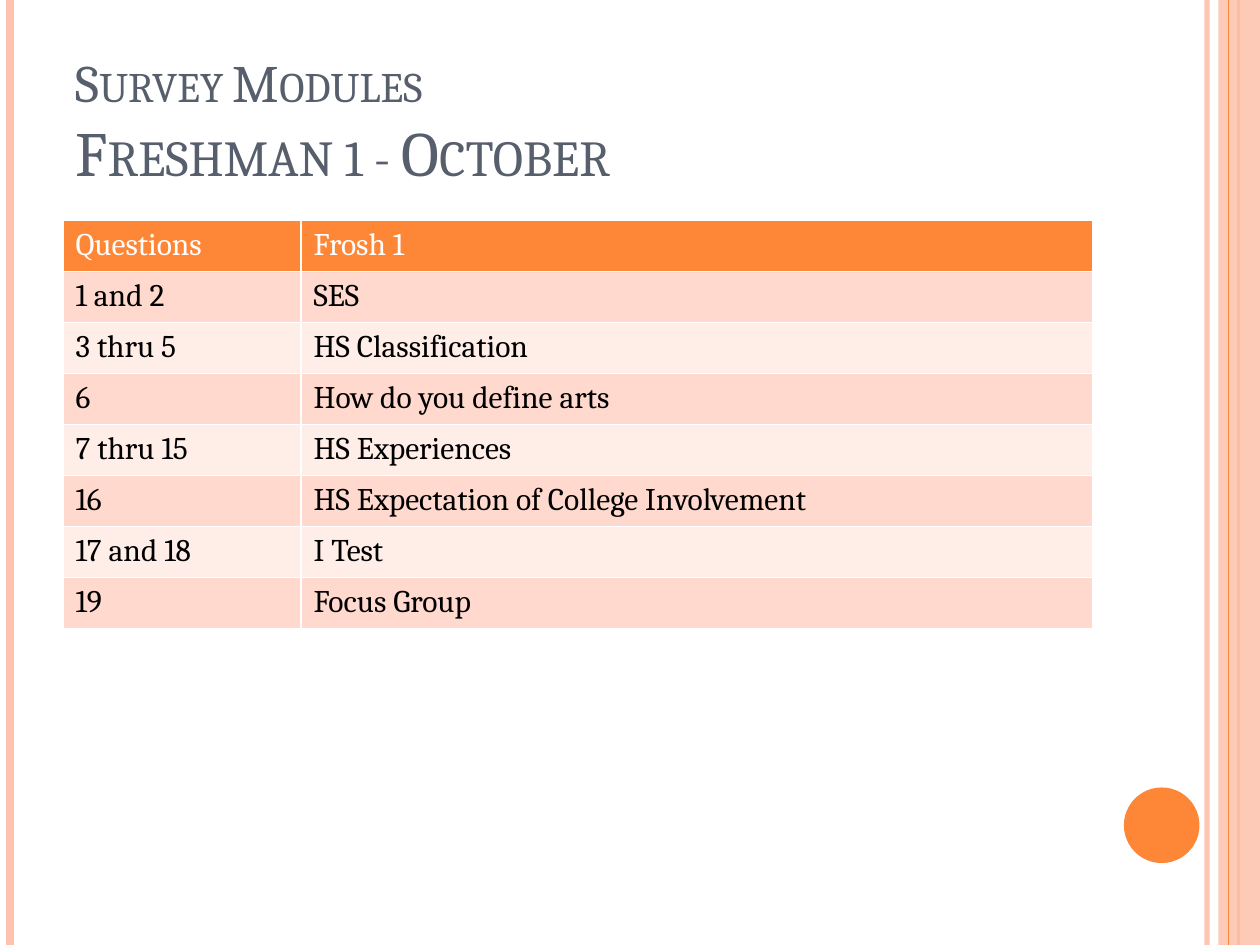
from pptx import Presentation, util as u
from pptx.dml.color import RGBColor
from pptx.enum import shapes, text
from pptx.oxml.ns import qn
from lxml import etree

ORANGE, PEACH, WHITE = "FE8637", "FEC3AE", "FFFFFF"
BANDS = ("FFD9CE", "FFEDE8")
ROWS = [
    ("Questions", "Frosh 1"),
    ("1 and 2", "SES"),
    ("3 thru 5", "HS Classification"),
    ("6", "How do you define arts"),
    ("7 thru 15", "HS Experiences"),
    ("16", "HS Expectation of College Involvement"),
    ("17 and 18", "I Test"),
    ("19", "Focus Group"),
]


def rgb(code):
    return RGBColor.from_string(code)


def fade(fmt, share):
    """Set the opacity, in percent, of a solid fill inside an element."""
    tone = next(fmt.iter(qn("a:srgbClr")))
    etree.SubElement(tone, qn("a:alpha"), val=str(share * 1000))


class Deck:
    def __init__(self, font):
        self.font = font
        self.prs = Presentation()
        self.prs.slide_width, self.prs.slide_height = u.Inches(10), u.Inches(7.5)
        self.slide = self.prs.slides.add_slide(self.prs.slide_layouts[5])

    def style(self, font, size, color):
        font.name, font.size, font.bold = self.font, u.Pt(size), False
        font.color.rgb = rgb(color)

    def rule(self, x, width, color, alpha=100):
        """Draw a vertical line down the whole slide."""
        line = self.slide.shapes.add_connector(
            shapes.MSO_CONNECTOR.STRAIGHT,
            u.Inches(x), 0, u.Inches(x), self.prs.slide_height)
        line.line.width = u.Pt(width)
        line.line.color.rgb = rgb(color)
        props = line._element.spPr
        etree.SubElement(props, qn("a:effectLst"))
        if alpha < 100:
            fade(props, alpha)

    def shape(self, kind, box, color, alpha=100):
        item = self.slide.shapes.add_shape(kind, *map(u.Inches, box))
        item.shadow.inherit = False
        item.fill.solid()
        item.fill.fore_color.rgb = rgb(color)
        item.line.fill.background()
        if alpha < 100:
            fade(item._element.spPr, alpha)

    def title(self, box, lines, color):
        """Fill the title with (words, size) lines in small capitals."""
        item = self.slide.shapes.title
        item.left, item.top, item.width, item.height = map(u.Inches, box)
        frame = item.text_frame
        frame.word_wrap = True
        frame.auto_size = text.MSO_AUTO_SIZE.NONE
        frame.vertical_anchor = text.MSO_ANCHOR.BOTTOM
        para = frame.paragraphs[0]
        para.alignment = text.PP_ALIGN.LEFT
        for i, (words, size) in enumerate(lines):
            if i:
                para.add_line_break()
            run = para.add_run()
            run.text = words
            self.style(run.font, size, color)
            run._r.get_or_add_rPr().set("cap", "small")

    def edge(self, cell, color, width):
        props = cell._tc.get_or_add_tcPr()
        for i, side in enumerate(("lnL", "lnR", "lnT", "lnB")):
            line = etree.Element(qn("a:" + side), w=str(u.Pt(width)))
            fill = etree.SubElement(line, qn("a:solidFill"))
            etree.SubElement(fill, qn("a:srgbClr"), val=color)
            props.insert(i, line)

    def table(self, box, widths, rows):
        grid = self.slide.shapes.add_table(
            len(rows), len(widths), *map(u.Inches, box)).table
        for col, width in zip(grid.columns, widths):
            col.width = u.Inches(width)
        for r, row in enumerate(rows):
            for c, words in enumerate(row):
                cell = grid.cell(r, c)
                cell.text = words
                cell.fill.solid()
                cell.fill.fore_color.rgb = rgb(BANDS[(r - 1) % 2] if r else ORANGE)
                self.style(cell.text_frame.paragraphs[0].font, 18,
                           "000000" if r else WHITE)
                self.edge(cell, WHITE, 1)


def main():
    deck = Deck("Cambria")
    deck.rule(9.58, 3, PEACH, 93)
    deck.rule(0.08, 4.5, PEACH)
    deck.rule(9.83, 1.5, ORANGE)
    deck.shape(shapes.MSO_SHAPE.RECTANGLE, (9.67, 0, 0.33, 7.5), PEACH, 87)
    deck.rule(9.75, 0.75, ORANGE)
    deck.shape(shapes.MSO_SHAPE.OVAL, (8.92, 6.25, 0.6, 0.6), ORANGE)
    deck.title((0.5, 0.3, 8.17, 1.25),
               [("Survey Modules", 30), ("Freshman 1 - October", 36)], "575F6D")
    deck.table((0.5, 1.75, 8.17, 3.24), (1.89, 6.28), ROWS)
    deck.prs.save("out.pptx")


if __name__ == "__main__":
    main()
